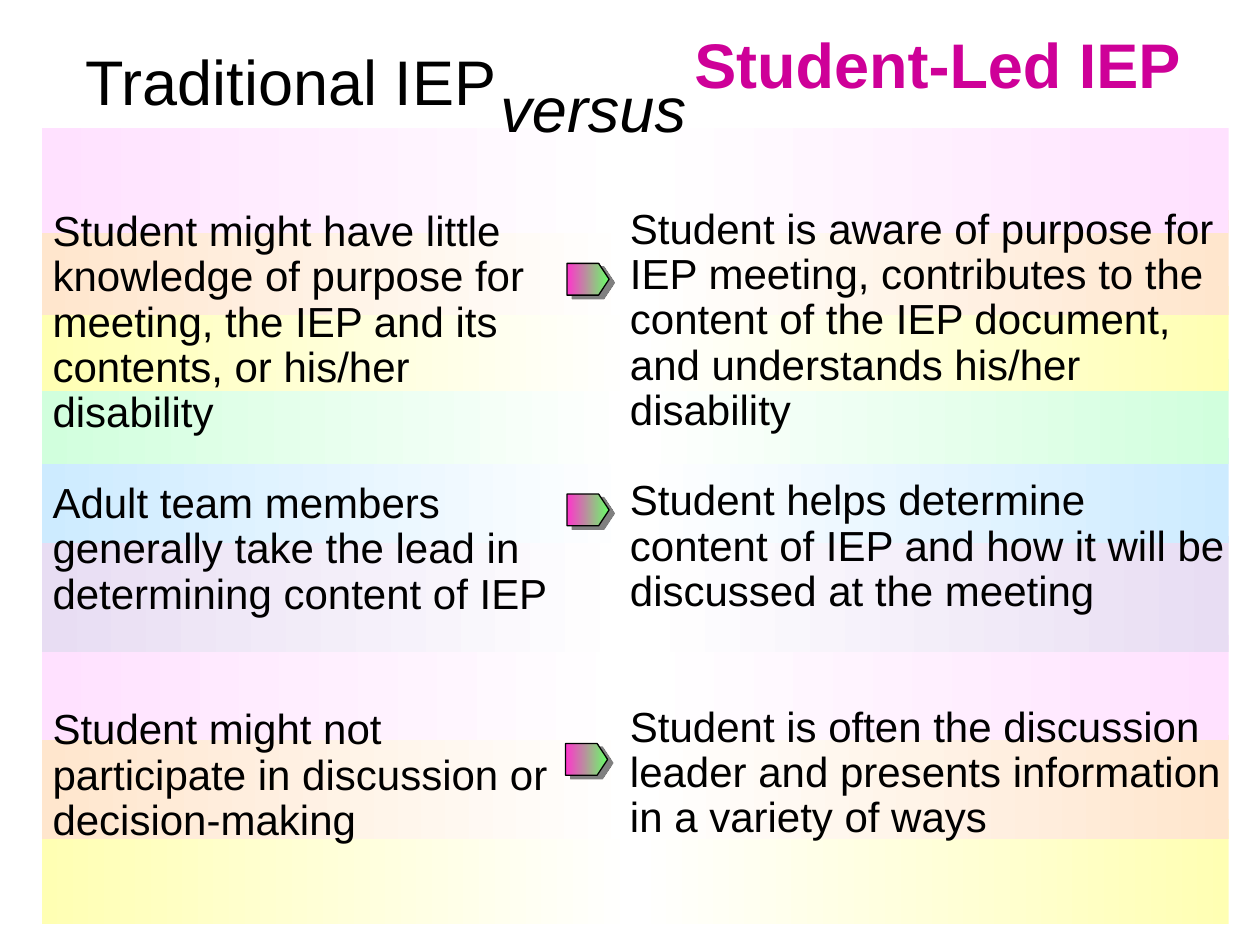
import copy
import dataclasses

import lxml.etree
import pptx
import pptx.dml.color
import pptx.enum.shapes
import pptx.enum.text
import pptx.oxml.ns
import pptx.util

Cm = pptx.util.Cm
Pt = pptx.util.Pt
KIND = pptx.enum.shapes.MSO_SHAPE
ALIGN = pptx.enum.text.PP_ALIGN
qn = pptx.oxml.ns.qn


@dataclasses.dataclass(frozen=True)
class Theme:
    font: str = "Arial"
    title: float = 36
    body: float = 24
    line: float = 25.8  # height of one body line at 90 % spacing
    ink: str = "000000"
    accent: str = "CE0098"
    white: str = "FFFFFF"
    shade: str = "808080"
    arrow: tuple = ("FF34CC", "66FF66")
    pink: str = "FFE1FF"
    peach: str = "FFE6CD"
    yellow: str = "FFFFB3"
    green: str = "D1FFDD"
    blue: str = "CDEBFF"
    violet: str = "E8DDF3"


@dataclasses.dataclass(frozen=True)
class Box:
    left: float
    top: float
    width: float
    height: float

    def place(self) -> tuple:
        return tuple(Cm(v) for v in dataclasses.astuple(self))


@dataclasses.dataclass(frozen=True)
class Band:
    top: float
    color: str
    height: float = 2.11


@dataclasses.dataclass(frozen=True)
class Column:
    box: Box
    items: tuple


@dataclasses.dataclass(frozen=True)
class Title:
    text: str
    box: Box
    color: str = Theme.ink
    bold: bool = False
    italic: bool = False


THEME = Theme()
GAPS = (0, 1, 2)  # free lines above each item

BANDS = (
    Band(16.51, THEME.yellow),
    Band(14.81, THEME.peach),
    Band(12.8, THEME.pink),
    Band(10.8, THEME.violet, 2.34),
    Band(8.84, THEME.blue),
    Band(7.24, THEME.green),
    Band(5.77, THEME.yellow),
    Band(4.24, THEME.peach),
    Band(2.59, THEME.pink),
)

COLUMNS = (
    Column(Box(1.06, 4.24, 10.16, 14), (
        "Student might have little knowledge of purpose for meeting, "
        "the IEP and its contents, or his/her disability",
        "Adult team members generally take the lead in determining content of IEP",
        "Student might not participate in discussion or decision-making",
    )),
    Column(Box(12.7, 4.19, 12.07, 14.78), (
        "Student is aware of purpose for IEP meeting, contributes to the content "
        "of the IEP document, and understands his/her disability",
        "Student helps determine content of IEP and how it will be "
        "discussed at the meeting",
        "Student is often the discussion leader and presents information "
        "in a variety of ways",
    )),
)

ARROWS = tuple(
    Box(left, top, 0.85, 0.64)
    for left, top in ((11.43, 5.31), (11.43, 9.96), (11.4, 14.99))
)

TITLES = (
    Title("Traditional IEP", Box(1.27, 0.74, 9.2, 1.3)),
    Title("versus", Box(9.61, 1.27, 4.7, 0.64), italic=True),
    Title("Student-Led IEP", Box(13.5, 0.38, 10.8, 1.73), THEME.accent, bold=True),
)


def tint(code: str) -> pptx.dml.color.RGBColor:
    return pptx.dml.color.RGBColor.from_string(code)


def blend(shape, *colors: str) -> None:
    """Fill with evenly spaced colours from left to right."""
    shape.fill.gradient()
    shape.fill.gradient_angle = 0
    rack = shape._element.spPr.find(".//" + qn("a:gsLst"))
    while len(rack) < len(colors):
        rack.append(copy.deepcopy(rack[0]))
    for i, (stop, color) in enumerate(zip(shape.fill.gradient_stops, colors)):
        stop.position = i / (len(colors) - 1)
        stop.color.rgb = tint(color)


def cast(shape, color: str) -> None:
    """Add a hard shadow below and to the right."""
    shape.shadow.inherit = False
    effect = shape._element.spPr.find(qn("a:effectLst"))
    outer = lxml.etree.SubElement(
        effect, qn("a:outerShdw"), dist=str(Pt(3.6)), dir=str(34 * 60000),
        algn="ctr", rotWithShape="0")
    lxml.etree.SubElement(outer, qn("a:srgbClr"), val=color)


def write(para, text: str, *, size: float, color: str = THEME.ink,
          bold: bool = False, italic: bool = False, align=ALIGN.LEFT,
          pitch: float = 1, before: float = 0) -> None:
    para.alignment = align
    para.line_spacing = pitch
    para.space_before = Pt(before)
    run = para.add_run()
    run.text = text
    font = run.font
    font.name, font.size = THEME.font, Pt(size)
    font.bold, font.italic = bold, italic
    font.color.rgb = tint(color)


def draw_band(slide, band: Band) -> None:
    box = Box(0.84, band.top, 23.93, band.height)
    shape = slide.shapes.add_shape(KIND.RECTANGLE, *box.place())
    shape.shadow.inherit = False
    shape.line.fill.background()
    blend(shape, band.color, THEME.white, band.color)


def draw_column(slide, column: Column) -> None:
    frame = slide.shapes.add_textbox(*column.box.place()).text_frame
    frame.word_wrap = True
    frame.margin_left = frame.margin_right = 0
    frame.margin_top = frame.margin_bottom = 0
    for i, (text, gap) in enumerate(zip(column.items, GAPS)):
        para = frame.add_paragraph() if i else frame.paragraphs[0]
        write(para, text, size=THEME.body, pitch=0.9, before=gap * THEME.line)


def draw_arrow(slide, box: Box) -> None:
    shape = slide.shapes.add_shape(KIND.PENTAGON, *box.place())
    shape.adjustments[0] = 0.33
    blend(shape, *THEME.arrow)
    shape.line.color.rgb = tint(THEME.ink)
    shape.line.width = Pt(0.75)
    cast(shape, THEME.shade)


def draw_title(slide, title: Title) -> None:
    frame = slide.shapes.add_textbox(*title.box.place()).text_frame
    frame.word_wrap = False
    write(frame.paragraphs[0], title.text, size=THEME.title, color=title.color,
          bold=title.bold, italic=title.italic, align=ALIGN.CENTER)


def main() -> None:
    deck = pptx.Presentation()
    deck.slide_width, deck.slide_height = Cm(25.4), Cm(19.05)
    slide = deck.slides.add_slide(deck.slide_layouts[6])
    for draw, parts in ((draw_band, BANDS), (draw_column, COLUMNS),
                        (draw_arrow, ARROWS), (draw_title, TITLES)):
        for part in parts:
            draw(slide, part)
    deck.save("out.pptx")


if __name__ == "__main__":
    main()
